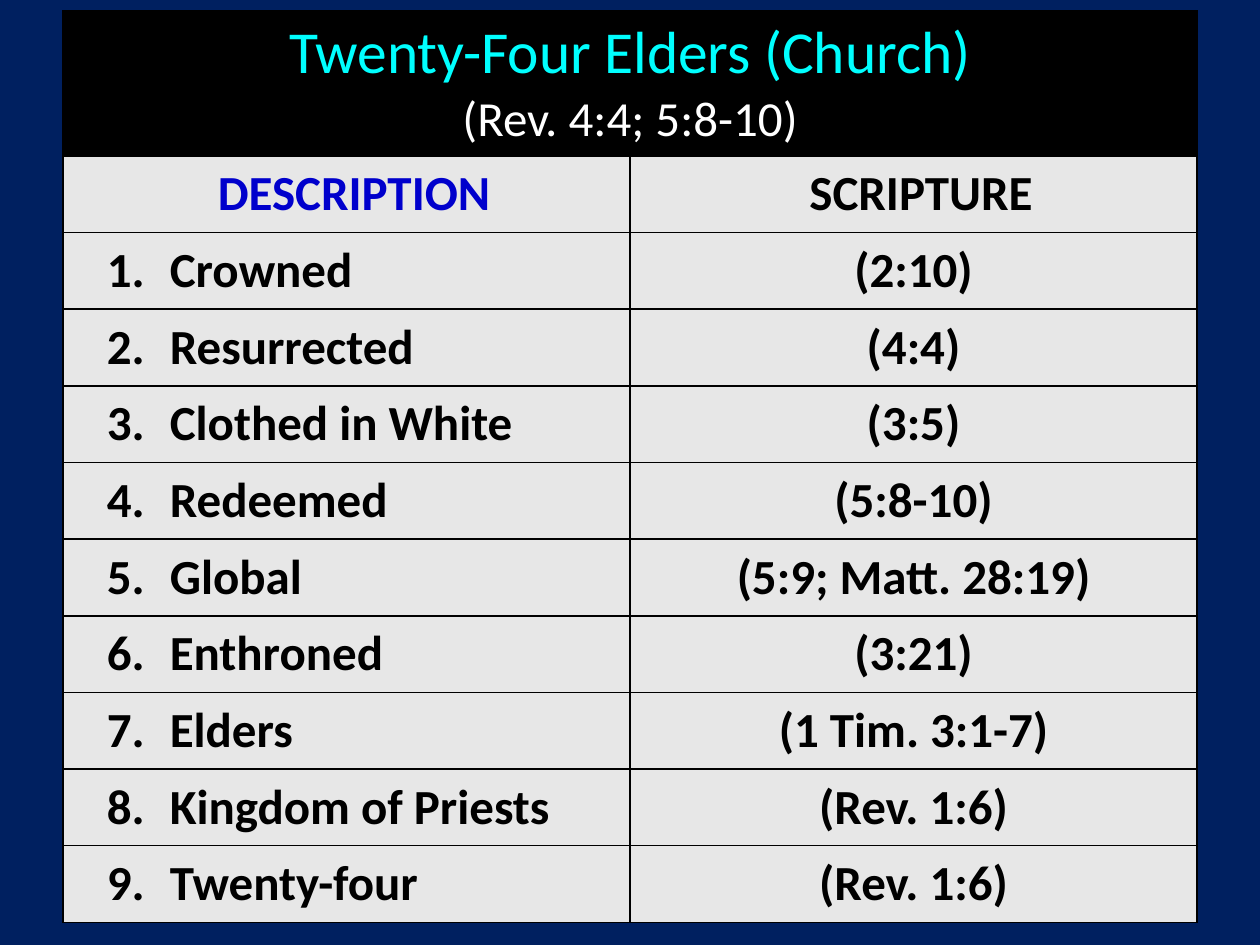
import dataclasses

import lxml.etree
import pptx
import pptx.dml.color
import pptx.enum.text
import pptx.oxml.ns
import pptx.util

Cm, Pt = pptx.util.Cm, pptx.util.Pt
ALIGN = pptx.enum.text.PP_ALIGN


@dataclasses.dataclass(frozen=True)
class Theme:
    font: str = "Calibri"
    title_size: int = 34
    body_size: int = 28
    background: str = "002060"
    banner: str = "000000"
    cell: str = "E7E7E7"
    border: str = "000000"
    title: str = "00FFFF"
    reference: str = "FFFFFF"
    description: str = "0000CC"
    text: str = "000000"


THEME = Theme()
HEADINGS = [("DESCRIPTION", THEME.description), ("SCRIPTURE", THEME.text)]
TRAITS = [
    ("Crowned", "(2:10)"),
    ("Resurrected", "(4:4)"),
    ("Clothed in White", "(3:5)"),
    ("Redeemed", "(5:8-10)"),
    ("Global", "(5:9; Matt. 28:19)"),
    ("Enthroned", "(3:21)"),
    ("Elders", "(1 Tim. 3:1-7)"),
    ("Kingdom of Priests", "(Rev. 1:6)"),
    ("Twenty-four", "(Rev. 1:6)"),
]


def rgb(value):
    return pptx.dml.color.RGBColor.from_string(value)


def write(paragraph, text, *, size=THEME.body_size, color=THEME.text, bold=True,
          align=ALIGN.CENTER, margin=0, indent=0, level=0, after=None):
    """Fill a paragraph; margin and indent are in centimetres."""
    properties = paragraph._p.get_or_add_pPr()
    properties.set("marL", str(Cm(margin)))
    properties.set("indent", str(Cm(indent)))
    paragraph.level = level
    paragraph.alignment = align
    if after is not None:
        paragraph.space_after = Pt(after)
    run = paragraph.add_run()
    run.text = text
    run.font.name = THEME.font
    run.font.size = Pt(size)
    run.font.bold = bold
    run.font.color.rgb = rgb(color)


class SlideBuilder:
    def __init__(self, deck, theme):
        self.theme = theme
        self.slide = deck.slides.add_slide(deck.slide_layouts[6])
        background = self.slide.background.fill
        background.solid()
        background.fore_color.rgb = rgb(theme.background)

    def table(self, left, top, column_widths, row_heights):
        table = self.slide.shapes.add_table(
            len(row_heights), len(column_widths), Cm(left), Cm(top),
            Cm(sum(column_widths)), Cm(sum(row_heights))).table
        table.horz_banding = False
        for column, width in zip(table.columns, column_widths):
            column.width = Cm(width)
        for row, height in zip(table.rows, row_heights):
            row.height = Cm(height)
        for cell in table.iter_cells():
            self.style_cell(cell, self.theme.cell)
        return table

    def style_cell(self, cell, fill):
        cell.vertical_anchor = pptx.enum.text.MSO_ANCHOR.MIDDLE
        cell.fill.solid()
        cell.fill.fore_color.rgb = rgb(fill)
        self.border(cell)

    def border(self, cell, width=1):
        """Draw all four sides; the schema wants them ahead of the fill."""
        qn = pptx.oxml.ns.qn
        properties = cell._tc.get_or_add_tcPr()
        for position, side in enumerate(("a:lnL", "a:lnR", "a:lnT", "a:lnB")):
            for old_line in properties.findall(qn(side)):
                properties.remove(old_line)
            line = lxml.etree.Element(qn(side), w=str(Pt(width)))
            solid = lxml.etree.SubElement(line, qn("a:solidFill"))
            lxml.etree.SubElement(solid, qn("a:srgbClr"), val=self.theme.border)
            properties.insert(position, line)

    def banner(self, table, title, reference):
        """Merge the first row into a heading of two lines."""
        table.cell(0, 0).merge(table.cell(0, len(table.columns) - 1))
        for cell in table.rows[0].cells:
            self.style_cell(cell, self.theme.banner)
        frame = table.cell(0, 0).text_frame
        write(frame.paragraphs[0], title, size=self.theme.title_size,
              color=self.theme.title, bold=False)
        write(frame.add_paragraph(), reference, color=self.theme.reference, bold=False)


def main():
    deck = pptx.Presentation()
    deck.slide_width, deck.slide_height = Cm(25.4), Cm(19.05)
    builder = SlideBuilder(deck, THEME)

    elders = builder.table(1.27, 0.22, [11.43] * 2, [2.92] + [1.545] * (len(TRAITS) + 1))
    builder.banner(elders, "Twenty-Four Elders (Church)", "(Rev. 4:4; 5:8-10)")
    for column, (heading, color) in enumerate(HEADINGS):
        write(elders.cell(1, column).text_frame.paragraphs[0], heading,
              color=color, margin=0.3)
    for number, (trait, scripture) in enumerate(TRAITS, start=1):
        trait_cell, scripture_cell = elders.rows[number + 1].cells
        write(trait_cell.text_frame.paragraphs[0], f"{number}.\t{trait}",
              align=ALIGN.LEFT, margin=1.9, indent=-1.27, level=1, after=6)
        write(scripture_cell.text_frame.paragraphs[0], scripture)

    deck.save("out.pptx")


if __name__ == "__main__":
    main()
